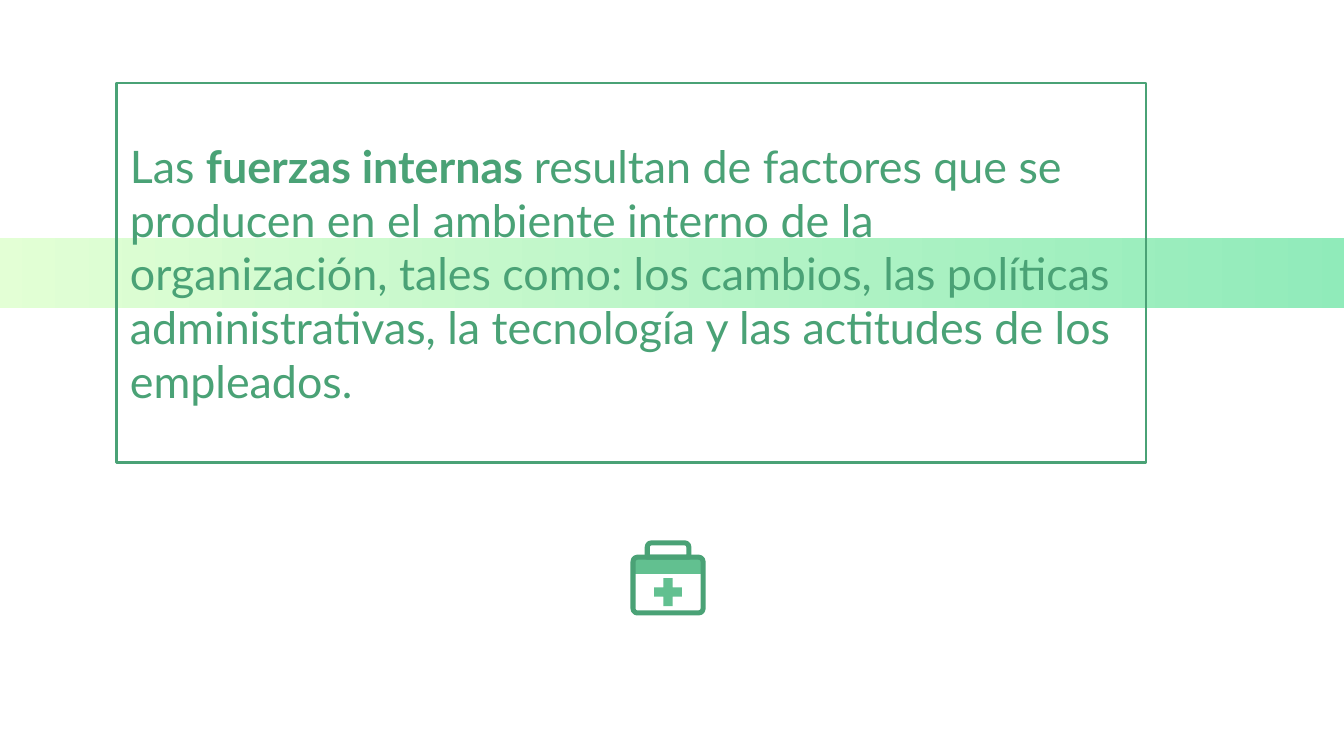
from pptx import Presentation
from pptx.dml.color import RGBColor
from pptx.enum.shapes import MSO_SHAPE
from pptx.enum.text import MSO_ANCHOR, PP_ALIGN
from pptx.util import Pt

RECT = MSO_SHAPE.RECTANGLE
ROUNDED = MSO_SHAPE.ROUNDED_RECTANGLE
ROUND_TOP = MSO_SHAPE.ROUND_2_SAME_RECTANGLE
CROSS = MSO_SHAPE.CROSS
MIDDLE = MSO_ANCHOR.MIDDLE
LEFT = PP_ALIGN.LEFT

COLORS = {
    "green": "4AA276",
    "mint": "62C090",
    "band_start": "E3FFD5",
    "band_end": "90EBBA",
}
FONT = "Lato"

STATEMENT = [
    ("Las ", False),
    ("fuerzas internas ", True),
    ("resultan de factores que se producen en el ambiente interno de la "
     "organización, tales como: los cambios, las políticas administrativas, "
     "la tecnología y las actitudes de los empleados.", False),
]


def color(name):
    return RGBColor.from_string(COLORS[name])


def add_part(slide, kind, box, fill=None, line=None, width=1.5, corner=None):
    part = slide.shapes.add_shape(kind, *(Pt(v) for v in box))
    part.shadow.inherit = False
    if fill:
        part.fill.solid()
        part.fill.fore_color.rgb = color(fill)
    else:
        part.fill.background()
    if line:
        part.line.color.rgb = color(line)
        part.line.width = Pt(width)
    else:
        part.line.fill.background()
    if corner is not None:
        part.adjustments[0] = corner
    return part


def add_band(slide, box):
    band = add_part(slide, RECT, box)
    band.fill.gradient()
    band.fill.gradient_angle = 0
    for stop, name, position in zip(band.fill.gradient_stops,
                                    ("band_start", "band_end"), (0, 1)):
        stop.color.rgb = color(name)
        stop.position = position


def add_statement(slide, box):
    left, top, width, height = box
    add_part(slide, RECT, box, line="green")

    # Text is centred on the band and overflows it evenly
    text_height = 37.5
    text_top = 127.5
    statement = slide.shapes.add_textbox(
        Pt(left), Pt(text_top), Pt(width), Pt(text_height))
    frame = statement.text_frame
    frame.word_wrap = True
    frame.vertical_anchor = MIDDLE
    frame.margin_left = frame.margin_right = Pt(7.2)
    frame.margin_top = frame.margin_bottom = Pt(7.2)
    paragraph = frame.paragraphs[0]
    paragraph.alignment = LEFT
    for words, bold in STATEMENT:
        run = paragraph.add_run()
        run.text = words
        run.font.name = FONT
        run.font.size = Pt(24)
        run.font.bold = bold
        run.font.color.rgb = color("green")


def add_first_aid_icon(slide, box):
    left, top, width, height = box
    stroke = 2.7
    inset = stroke / 2
    case_top = 9
    case_width = width - stroke
    case_height = height - case_top - inset
    cross_size = 15

    def centred(part_top, part_width, part_height):
        return (left + (width - part_width) / 2, top + part_top,
                part_width, part_height)

    # Lid, handle, case, cross
    add_part(slide, ROUND_TOP, centred(case_top, case_width, 9),
             fill="mint", corner=0.3)
    add_part(slide, ROUND_TOP, centred(inset, 22.3, case_top - inset),
             line="green", width=stroke, corner=0.29)
    add_part(slide, ROUNDED, centred(case_top, case_width, case_height),
             line="green", width=stroke, corner=0.08)
    add_part(slide, CROSS, centred(20.2, cross_size, cross_size),
             fill="mint", corner=1 / 3)


def main():
    deck = Presentation()
    deck.slide_width, deck.slide_height = Pt(720), Pt(405)
    slide = deck.slides.add_slide(deck.slide_layouts[6])
    add_band(slide, (-6, 127.5, 732, 37.5))
    add_statement(slide, (62.5, 44.5, 551.5, 203.5))
    add_first_aid_icon(slide, (337.75, 289.5, 40.25, 40.25))
    deck.save("out.pptx")


if __name__ == "__main__":
    main()
